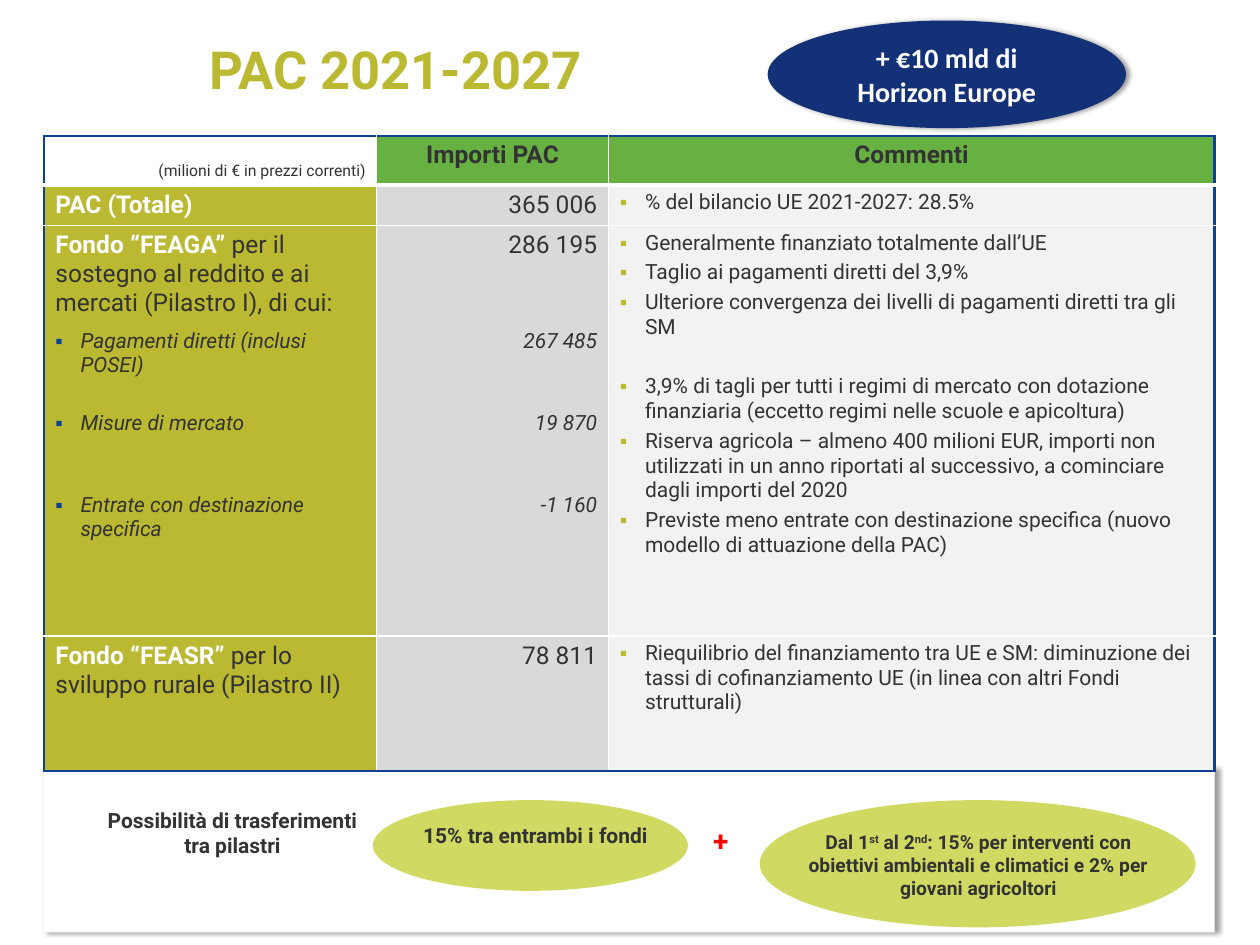
import pptx
import pptx.util
import pptx.dml.color
import pptx.enum.shapes
import pptx.enum.text
import pptx.oxml.ns
import lxml.etree

Pt = pptx.util.Pt
rgb = pptx.dml.color.RGBColor.from_string
MSO = pptx.enum.shapes.MSO_SHAPE
ANCHOR = pptx.enum.text.MSO_ANCHOR
LEFT, CENTER, RIGHT = (pptx.enum.text.PP_ALIGN[n] for n in ("LEFT", "CENTER", "RIGHT"))
NAVY, OLIVE, GREEN, LIME, INK, WHITE = "0E4194", "BBB831", "66B142", "D0D962", "333333", "FFFFFF"


def el(parent, tag, **attrs):
    child = lxml.etree.SubElement(parent, pptx.oxml.ns.qn("a:" + tag))
    for k, v in attrs.items():
        child.set(k, str(v))
    return child


def write(tf, paras, align=LEFT, bullet=None, gaps=(), **base):
    for i, runs in enumerate(paras):
        p = tf.paragraphs[0] if i == 0 else tf.add_paragraph()
        p.alignment = align
        if bullet:
            p.space_after = Pt(dict(gaps).get(i, 3))
            pPr = p._p.get_or_add_pPr()
            pPr.set("marL", str(2 * u))
            pPr.set("indent", str(-2 * u))
            el(el(pPr, "buClr"), "srgbClr", val=bullet)
            el(pPr, "buFont", typeface="Arial")
            el(pPr, "buChar", char="▪")
        for text, own in [(runs, {})] if isinstance(runs, str) else runs:
            r = p.add_run()
            r.text = text
            fmt = {"name": "Roboto", "size": 12, "bold": False, "color": INK, **base, **own}
            r.font.color.rgb = rgb(fmt.pop("color"))
            if "raised" in fmt:
                r._r.get_or_add_rPr().set("baseline", str(fmt.pop("raised") * 1000))
            fmt["size"] = Pt(fmt["size"])
            for k, v in fmt.items():
                setattr(r.font, k, v)


prs = pptx.Presentation()
prs.slide_width, prs.slide_height = pptx.util.Inches(10), pptx.util.Inches(7.5)
u = prs.slide_width // 100
s = prs.slides.add_slide(prs.slide_layouts[5])

title = s.shapes.title
for k, v in {"left": 15.6, "top": 2.4, "width": 84.1, "height": 10.2}.items():
    setattr(title, k, round(v * u))
title.text_frame.vertical_anchor = ANCHOR.TOP
write(title.text_frame, ["PAC 2021-2027"], size=30, bold=True, color=OLIVE)

shapes = [
    (MSO.RECTANGLE, (3.5, 61, 92.9, 13), WHITE, True),
    (MSO.OVAL, (29.6, 63.5, 25, 7.2), LIME, False),
    (MSO.OVAL, (60.3, 63.5, 34.6, 10.1), LIME, False),
    (MSO.OVAL, (61, 1.7, 28.3, 8.4), "133176", True),
]
for kind, at, fill, shadow in shapes:
    sp = s.shapes.add_shape(kind, *[round(v * u) for v in at])
    sp.shadow.inherit = False
    sp.fill.solid()
    sp.fill.fore_color.rgb = rgb(fill)
    sp.line.fill.background()
    if shadow:
        effects = sp._element.spPr.find(pptx.oxml.ns.qn("a:effectLst"))
        outer = el(effects, "outerShdw", blurRad=Pt(3.1), dist=Pt(1.8), dir=0, algn="ctr", rotWithShape=0)
        el(el(outer, "srgbClr", val="000000"), "alpha", val=40000)

sp.line.color.rgb = rgb("133176")
sp.line.width = Pt(1)
sp.text_frame.vertical_anchor = ANCHOR.MIDDLE
sp.text_frame.word_wrap = True
write(sp.text_frame, ["+ €10 mld di Horizon Europe"], CENTER,
      name="Calibri", size=16, bold=True, color=WHITE)

head = {"size": 14, "bold": True, "color": WHITE}
body = {"size": 14}
big = {"align": RIGHT, "size": 14}
small = {"align": RIGHT, "italic": True}
item = {"bullet": NAVY, "italic": True}
note = {"bullet": OLIVE}
header = {"align": CENTER, "size": 14, "bold": True}
rows = [
    [(["(milioni di € in prezzi correnti)"], {"align": RIGHT, "size": 9}),
     (["Importi PAC"], header), (["Commenti"], header)],
    [(["PAC (Totale)"], head), (["365 006"], big),
     (["% del bilancio UE 2021-2027: 28.5%"], note)],
    [([[("Fondo “FEAGA”", head),
        (" per il sostegno al reddito e ai mercati (Pilastro I), di cui:", body)]], {}),
     (["286 195"], big),
     (["Generalmente finanziato totalmente dall’UE",
       "Taglio ai pagamenti diretti del 3,9%",
       "Ulteriore convergenza dei livelli di pagamenti diretti tra gli SM",
       "3,9% di tagli per tutti i regimi di mercato con dotazione finanziaria "
       "(eccetto regimi nelle scuole e apicoltura)",
       "Riserva agricola – almeno 400 milioni EUR, importi non utilizzati in un anno "
       "riportati al successivo, a cominciare dagli importi del 2020",
       "Previste meno entrate con destinazione specifica (nuovo modello di attuazione della PAC)"],
      {**note, "gaps": {2: 20}})],
    [(["Pagamenti diretti (inclusi POSEI)"], item), (["267 485"], small)],
    [(["Misure di mercato"], item), (["19 870"], small)],
    [(["Entrate con destinazione specifica"], item), (["-1 160"], small)],
    [([[("Fondo “FEASR” ", head), ("per lo sviluppo rurale (Pilastro II)", body)]], {}),
     (["78 811"], big),
     (["Riequilibrio del finanziamento tra UE e SM: diminuzione dei tassi di "
       "cofinanziamento UE (in linea con altri Fondi strutturali)"], note)],
]
widths = [26.4, 18.4, 48.1]
heights = [3.9, 3.2, 7.8, 6.5, 6.5, 11.8, 10.7]
outer, inner = (NAVY, 1.5), (WHITE, 1)
across = [outer, (WHITE, 3), inner, None, None, None, inner, outer]
down = [outer, inner, inner, outer]

frame = s.shapes.add_table(len(heights), len(widths), *[
    round(v * u) for v in (3.5, 10.8, sum(widths), sum(heights))])
tbl = frame.table
tbl.first_row = tbl.horz_banding = False
for c, w in enumerate(widths):
    tbl.columns[c].width = round(w * u)
for r, h in enumerate(heights):
    tbl.rows[r].height = round(h * u)
tbl.cell(2, 2).merge(tbl.cell(5, 2))

for r in range(len(heights)):
    for c, fill in enumerate([WHITE, GREEN, GREEN] if r == 0 else [OLIVE, "D9D9D9", "F2F2F2"]):
        cell = tbl.cell(r, c)
        for side in ("left", "right", "top", "bottom"):
            setattr(cell, "margin_" + side, round((0.9 if side in ("left", "right") else 0.4) * u))
        bottom = r + (cell.span_height if cell.is_merge_origin else 1)
        edges = {"lnL": down[c], "lnR": down[c + 1], "lnT": across[r], "lnB": across[bottom]}
        tcPr = cell._tc.get_or_add_tcPr()
        for tag, edge in edges.items():
            if edge:
                ln = el(tcPr, tag, w=Pt(edge[1]))
                el(el(ln, "solidFill"), "srgbClr", val=edge[0])
            else:
                el(el(tcPr, tag, w=0), "noFill")
        cell.fill.solid()
        cell.fill.fore_color.rgb = rgb(fill)
        if c < len(rows[r]):
            paras, fmt = rows[r][c]
            write(cell.text_frame, paras, **fmt)
tbl.cell(0, 0).vertical_anchor = ANCHOR.BOTTOM

sup = {"raised": 30}
labels = [
    ((30, 64.8, 25, 3), ["15% tra entrambi i fondi"], {}),
    ((6.5, 63.6, 23.9, 5), ["Possibilità di trasferimenti tra pilastri"], {}),
    ((54.3, 64.9, 5.8, 3.7), ["+"], {"size": 16, "color": "FF0000"}),
    ((62.2, 65.4, 30.9, 8.6),
     [[("Dal 1", {}), ("st", sup), (" al 2", {}), ("nd", sup),
       (": 15% per interventi con obiettivi ambientali e climatici e 2% per giovani agricoltori", {})]],
     {"size": 11}),
]
for at, paras, fmt in labels:
    tf = s.shapes.add_textbox(*[round(v * u) for v in at]).text_frame
    tf.word_wrap = True
    write(tf, paras, CENTER, bold=True, **fmt)

prs.save("out.pptx")
